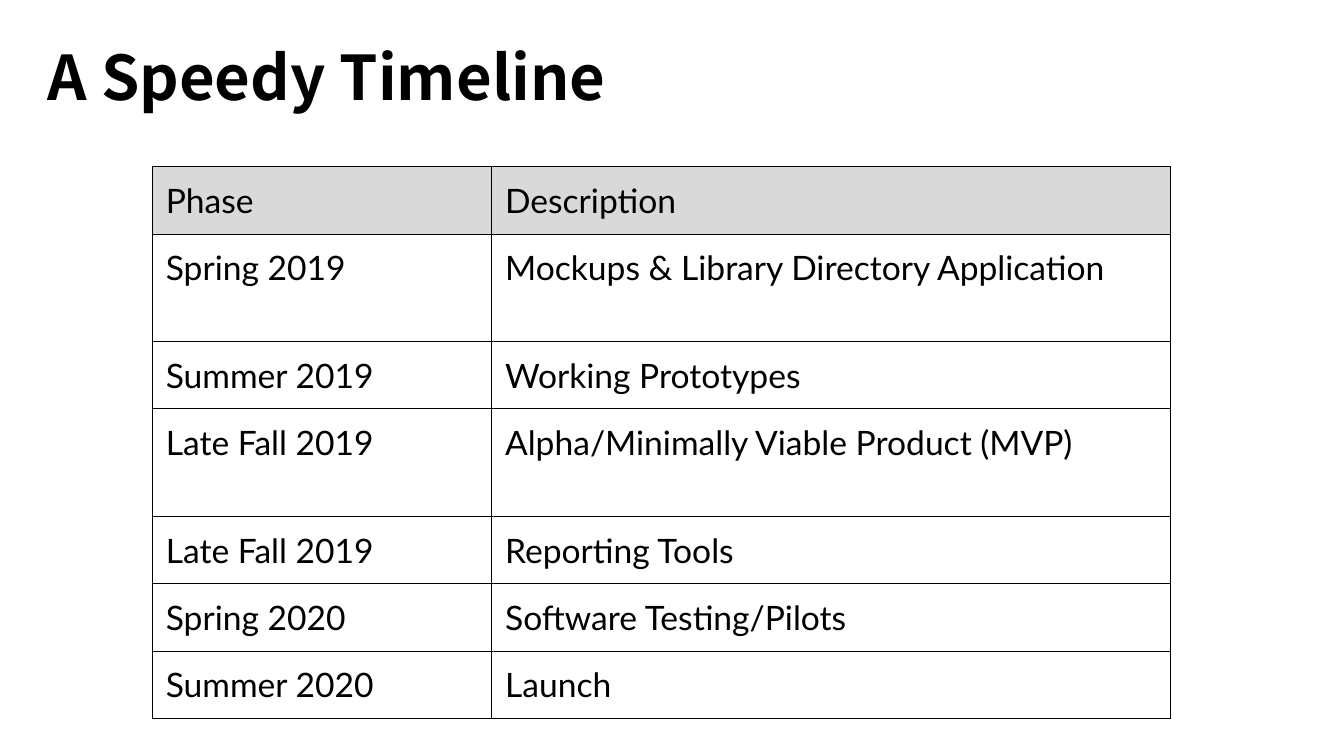
import pptx
import pptx.dml.color
import pptx.enum.text
import pptx.oxml
import pptx.oxml.ns
import pptx.util
from dataclasses import dataclass

Cm = pptx.util.Cm
Pt = pptx.util.Pt

TITLE = "A Speedy Timeline"
HEADER = ("Phase", "Description")
PHASES = [
    ("Spring 2019", "Mockups & Library Directory Application"),
    ("Summer 2019", "Working Prototypes"),
    ("Late Fall 2019", "Alpha/Minimally Viable Product (MVP)"),
    ("Late Fall 2019", "Reporting Tools"),
    ("Spring 2020", "Software Testing/Pilots"),
    ("Summer 2020", "Launch"),
]
TALL_ROWS = {1, 3}
COLUMN_WIDTHS = (Cm(8.55), Cm(17.1))
ROW_HEIGHT, TALL_HEIGHT = Cm(1.69), Cm(2.71)
INSET = Cm(0.34)


@dataclass(frozen=True)
class Theme:
    title_font: str = "Noto Sans CJK KR"
    body_font: str = "Lato"
    title_size: int = 44
    body_size: int = 24
    ink: str = "000000"
    header_fill: str = "D9D9D9"
    border_width: float = 0.75


THEME = Theme()


def color(value):
    return pptx.dml.color.RGBColor.from_string(value)


def add_span(para, text, font, size, bold=False):
    span = para.add_run()
    span.text = text
    span.font.name = font
    span.font.size = Pt(size)
    span.font.bold = bold
    span.font.color.rgb = color(THEME.ink)


def set_insets(box):
    box.margin_left = box.margin_right = INSET
    box.margin_top = box.margin_bottom = INSET


def add_borders(cell):
    properties = cell._tc.get_or_add_tcPr()
    for side in ("lnL", "lnR", "lnT", "lnB"):
        properties.append(pptx.oxml.parse_xml(
            f'<a:{side} {pptx.oxml.ns.nsdecls("a")} w="{Pt(THEME.border_width)}">'
            f'<a:solidFill><a:srgbClr val="{THEME.ink}"/></a:solidFill></a:{side}>'
        ))


def add_title(page):
    title = page.shapes.title
    title.left, title.top = Cm(0.86), Cm(0.97)
    title.width, title.height = Cm(31.55), Cm(2.13)
    frame = title.text_frame
    set_insets(frame)
    frame.word_wrap = True
    frame.auto_size = pptx.enum.text.MSO_AUTO_SIZE.NONE
    frame.vertical_anchor = pptx.enum.text.MSO_ANCHOR.MIDDLE
    para = frame.paragraphs[0]
    para.alignment = pptx.enum.text.PP_ALIGN.LEFT
    para.line_spacing = 0.9
    add_span(para, TITLE, THEME.title_font, THEME.title_size, bold=True)


def add_timeline(page):
    rows = [HEADER, *PHASES]
    heights = [TALL_HEIGHT if index in TALL_ROWS else ROW_HEIGHT
               for index in range(len(rows))]
    table = page.shapes.add_table(
        len(rows), len(HEADER), Cm(3.84), Cm(4.2),
        sum(COLUMN_WIDTHS), sum(heights),
    ).table
    table.first_row = table.horz_banding = False
    for column, width in zip(table.columns, COLUMN_WIDTHS):
        column.width = width
    for row_index, (texts, height) in enumerate(zip(rows, heights)):
        table.rows[row_index].height = height
        for column_index, text in enumerate(texts):
            cell = table.cell(row_index, column_index)
            set_insets(cell)
            add_borders(cell)
            if row_index == 0:
                cell.fill.solid()
                cell.fill.fore_color.rgb = color(THEME.header_fill)
            else:
                cell.fill.background()
            add_span(cell.text_frame.paragraphs[0], text,
                     THEME.body_font, THEME.body_size)


def main():
    deck = pptx.Presentation()
    deck.slide_width, deck.slide_height = Cm(33.87), Cm(19.05)
    page = deck.slides.add_slide(deck.slide_layouts.get_by_name("Title Only"))
    add_title(page)
    add_timeline(page)
    deck.save("out.pptx")


if __name__ == "__main__":
    main()
